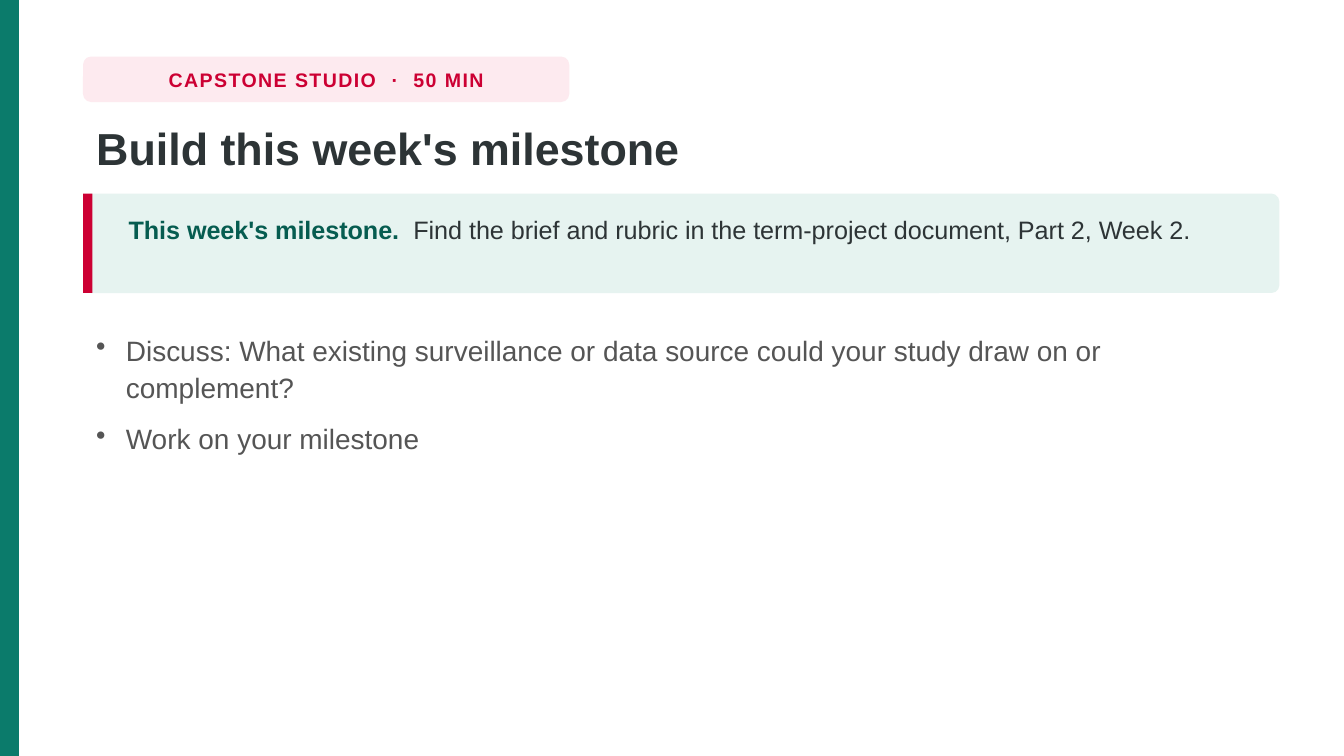
"""Build the capstone studio milestone slide."""
import pptx
import pptx.util
import pptx.dml.color
import pptx.enum.shapes
import pptx.enum.text
import pptx.oxml.ns
import lxml.etree

Cm = pptx.util.Cm
Kind = pptx.enum.shapes.MSO_SHAPE
Align = pptx.enum.text.PP_ALIGN
Anchor = pptx.enum.text.MSO_ANCHOR

RED, TEAL, DEEP, INK, GREY = "CC0033", "0B7B6B", "065C50", "2D3436", "555555"
ROSE, MINT = "FDEAEF", "E6F3F0"
WIDE, HIGH = 25.4, 14.29
LEFT, SPAN = 1.57, 22.61
PILL = (LEFT, 1.07, 9.19, 0.86)
CARD = (LEFT, 3.66, SPAN, 1.88)

TAG = [("CAPSTONE STUDIO", {}), (" ", {"gap": 4.5}), ("·", {}),
       (" ", {"gap": 4.5}), ("50 MIN", {})]
TITLE = [("Build this week's milestone", {})]
BRIEF = [
    ("This week's milestone.", {"color": DEEP, "bold": True}),
    (" ", {"gap": 3.75}),
    ("Find the brief and rubric in the term-project document, Part 2, Week 2.", {}),
]
TASKS = [
    ("Discuss: What existing surveillance or data source could your study "
     "draw on or complement?", 1.47),
    ("Work on your milestone", 0.79),
]
TOP, GAP = 6.1, 0.2


def paint(text):
    return pptx.dml.color.RGBColor.from_string(text)


def block(kind, area, color, round=None):
    shape = slide.shapes.add_shape(kind, *map(Cm, area))
    shape.shadow.inherit = False
    shape.fill.solid()
    shape.fill.fore_color.rgb = paint(color)
    shape.line.fill.background()
    if round is not None:
        shape.adjustments[0] = round


def write(runs, area, size, color, bold=False, gap=0, line=None,
          align=Align.LEFT, anchor=Anchor.TOP, wrap=True, bullet=False):
    frame = slide.shapes.add_textbox(*map(Cm, area)).text_frame
    frame.word_wrap = wrap
    frame.vertical_anchor = anchor
    para = frame.paragraphs[0]
    para.alignment = align
    if line:
        para.line_spacing = line
    if bullet:
        props = para._p.get_or_add_pPr()
        props.set("marL", str(Cm(0.56)))
        props.set("indent", str(-Cm(0.56)))
        mark = lxml.etree.SubElement(props, pptx.oxml.ns.qn("a:buChar"))
        mark.set("char", "•")
    for text, own in runs:
        run = para.add_run()
        run.text = text
        font = run.font
        font.name = "Arial"
        font.size = pptx.util.Pt(size)
        font.bold = own.get("bold", bold)
        font.color.rgb = paint(own.get("color", color))
        space = own.get("gap", gap)
        if space:
            run._r.get_or_add_rPr().set("spc", str(round(space * 100)))


deck = pptx.Presentation()
deck.slide_width, deck.slide_height = Cm(WIDE), Cm(HIGH)
slide = deck.slides.add_slide(deck.slide_layouts[6])

block(Kind.RECTANGLE, (0, 0, 0.36, HIGH), TEAL)
block(Kind.ROUNDED_RECTANGLE, PILL, ROSE, 0.18)
write(TAG, PILL, 10.5, RED, bold=True, gap=0.8, align=Align.CENTER,
      anchor=Anchor.MIDDLE, wrap=False)
write(TITLE, (LEFT, 2.13, SPAN, 1.42), 24, INK, bold=True, line=1.02)

block(Kind.ROUNDED_RECTANGLE, CARD, MINT, 0.08)
block(Kind.RECTANGLE, (LEFT, CARD[1], 0.18, CARD[3]), RED)
write(BRIEF, (2.18, 3.84, 21.34, 1.52), 13.5, INK, line=1.14)

top = TOP
for text, tall in TASKS:
    write([(text, {})], (LEFT, top, SPAN, tall), 15, GREY, line=1.12, bullet=True)
    top += tall + GAP

deck.save("out.pptx")
